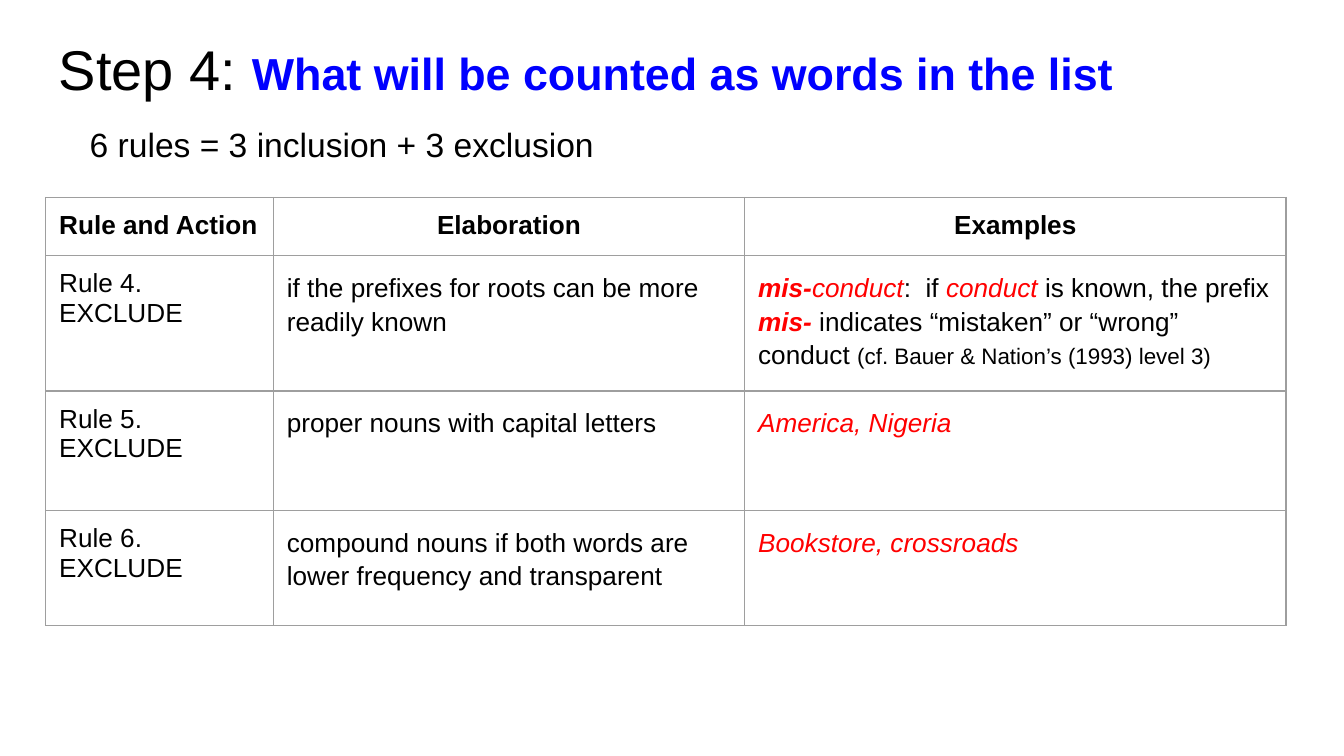
from dataclasses import dataclass

from lxml.etree import SubElement
from pptx import Presentation
from pptx.dml.color import RGBColor
from pptx.enum.text import MSO_ANCHOR, PP_ALIGN
from pptx.oxml.ns import qn
from pptx.util import Pt


@dataclass(frozen=True)
class Theme:
    font: str = "Arial"
    ink: str = "000000"
    accent: str = "0000FF"
    example: str = "FF0000"
    rule_line: str = "9E9E9E"
    step_size: float = 30
    heading_size: float = 24
    summary_size: float = 18
    body_size: float = 14
    citation_size: float = 12
    line_width: float = 0.75
    inset: float = 7.2


class RuleSlide:
    def __init__(self, presentation, theme):
        self.theme = theme
        self.slide = presentation.slides.add_slide(presentation.slide_layouts[6])

    def add_runs(self, paragraph, runs):
        """Add (text, style) runs; style may set size, color, bold, italic."""
        for text, style in runs:
            run = paragraph.add_run()
            run.text = text
            font = run.font
            font.name = self.theme.font
            font.size = Pt(style.get("size", self.theme.body_size))
            font.bold = style.get("bold", False)
            font.italic = style.get("italic", False)
            font.color.rgb = RGBColor.from_string(style.get("color", self.theme.ink))

    def heading(self, left, top, width, height, title_runs, summary_runs):
        frame = self.slide.shapes.add_textbox(
            Pt(left), Pt(top), Pt(width), Pt(height)).text_frame
        frame.word_wrap = True
        frame.vertical_anchor = MSO_ANCHOR.TOP
        frame.margin_left = frame.margin_right = Pt(self.theme.inset)
        frame.margin_top = Pt(10)
        self.add_runs(frame.paragraphs[0], title_runs)
        summary = frame.add_paragraph()
        summary.space_before = Pt(12)
        summary._p.get_or_add_pPr().set("marL", str(Pt(16.5)))
        self.add_runs(summary, summary_runs)

    def table(self, left, top, widths, heights, rows):
        grid = self.slide.shapes.add_table(
            len(heights), len(widths), Pt(left), Pt(top),
            Pt(sum(widths)), Pt(sum(heights))).table
        grid.first_row = grid.horz_banding = False
        for column, width in zip(grid.columns, widths):
            column.width = Pt(width)
        for row, height in zip(grid.rows, heights):
            row.height = Pt(height)
        for r, row_runs in enumerate(rows):
            for c, runs in enumerate(row_runs):
                self.cell(grid.cell(r, c), runs, is_header=r == 0, is_label=c == 0)

    def cell(self, cell, runs, is_header, is_label):
        cell.margin_left = cell.margin_right = Pt(self.theme.inset)
        cell.margin_top = cell.margin_bottom = Pt(self.theme.inset)
        paragraph = cell.text_frame.paragraphs[0]
        if not is_label:
            if is_header:
                paragraph.alignment = PP_ALIGN.CENTER
            else:
                paragraph.line_spacing = 1.15
        self.add_runs(paragraph, runs)
        # Borders come before the fill in the cell properties
        properties = cell._tc.get_or_add_tcPr()
        for side in ("a:lnL", "a:lnR", "a:lnT", "a:lnB"):
            border = SubElement(properties, qn(side), w=str(Pt(self.theme.line_width)))
            fill = SubElement(border, qn("a:solidFill"))
            SubElement(fill, qn("a:srgbClr"), val=self.theme.rule_line)
        cell.fill.background()


def main():
    presentation = Presentation()
    presentation.slide_width, presentation.slide_height = Pt(720), Pt(405)
    theme = Theme()
    rules = RuleSlide(presentation, theme)

    # Run styles
    plain = {}
    header = {"bold": True}
    example = {"color": theme.example, "italic": True}
    prefix = {**example, "bold": True}

    # Heading
    rules.heading(
        24.5, 8.6, 671, 84,
        [("Step 4: ", {"size": theme.step_size}),
         ("What will be counted as words in the list",
          {"size": theme.heading_size, "color": theme.accent, "bold": True})],
        [("6 rules = 3 inclusion + 3 exclusion", {"size": theme.summary_size})])

    # Exclusion rules
    prefix_example = [
        ("mis-", prefix), ("conduct", example), (":  if ", plain),
        ("conduct ", example), ("is known, the prefix ", plain),
        ("mis-", prefix), (" indicates “mistaken” or “wrong” conduct ", plain),
        ("(cf. Bauer & Nation’s (1993) level 3)", {"size": theme.citation_size}),
    ]
    exclusions = [
        ("if the prefixes for roots can be more readily known", prefix_example),
        ("proper nouns with capital letters", [("America, Nigeria", example)]),
        ("compound nouns if both words are lower frequency and transparent",
         [("Bookstore, crossroads", example)]),
    ]
    rows = [[[(title, header)] for title in ("Rule and Action", "Elaboration", "Examples")]]
    for number, (elaboration, examples) in enumerate(exclusions, start=4):
        rows.append([[(f"Rule {number}. EXCLUDE", plain)],
                     [(elaboration, plain)], examples])
    rules.table(24.5, 105.8, (122, 252.5, 290), (30, 72.5, 64, 61.5), rows)

    presentation.save("out.pptx")


if __name__ == "__main__":
    main()
